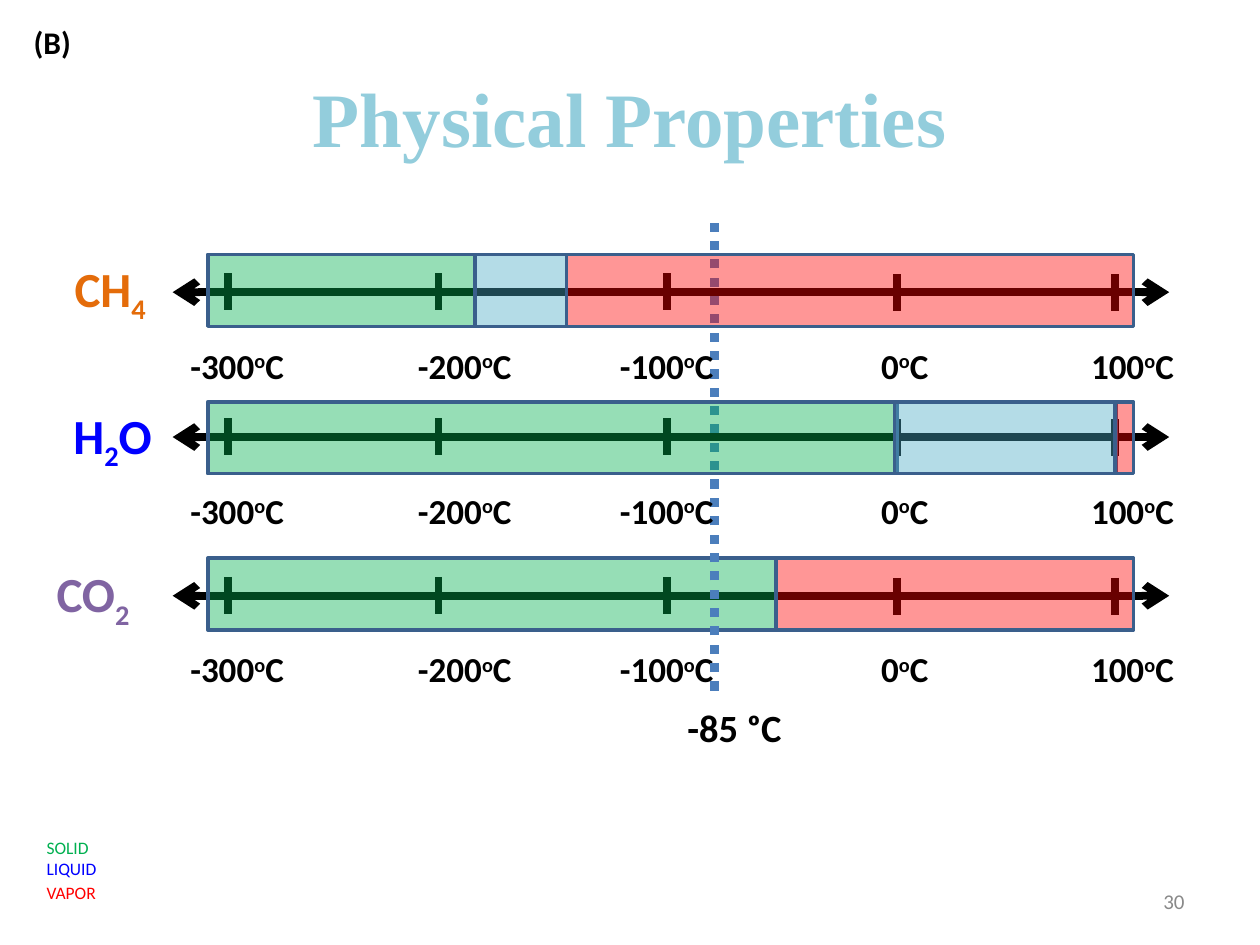
from lxml.etree import SubElement as Sub
from pptx import Presentation
from pptx.dml.color import RGBColor
from pptx.enum.dml import MSO_LINE as Dash
from pptx.enum.shapes import MSO_CONNECTOR as Link, MSO_SHAPE as Shape
from pptx.enum.text import MSO_ANCHOR as Anchor, PP_ALIGN as Align
from pptx.oxml.ns import qn
from pptx.util import Cm, Pt

BLACK, BLUE, EDGE = "000000", "0000FF", "3A5F8C"
SOLID, LIQUID, VAPOR = "00B050", "4BACC6", "FF0000"
SUPER, BELOW = 30, -25

# Tick position, label centre, label number (cm)
TICKS = [(4.6, 4.78, "-300"), (8.84, 9.37, "-200"), (13.44, 13.44, "-100"),
         (18.08, 18.24, "0"), (22.48, 22.83, "100")]
LEFT, RIGHT = 4.19, 22.85

# Axis height, top of the bands, then colour, start and end of each band
METHANE = (5.89, 5.13, [(SOLID, LEFT, 9.58), (LIQUID, 9.58, 11.42),
                        (VAPOR, 11.42, RIGHT)])
WATER = (8.81, 8.1, [(SOLID, LEFT, 18.08), (LIQUID, 18.03, 22.5),
                     (VAPOR, 22.48, RIGHT)])
CARBON = (12.01, 11.25, [(SOLID, LEFT, 15.65), (VAPOR, 15.65, RIGHT)])


def color(code):
    return RGBColor.from_string(code)


def style(par, size, code, bold=True, align=Align.LEFT, face="Calibri"):
    font = par.font
    font.name, font.size, font.bold = face, Pt(size), bold
    font.color.rgb = color(code)
    par.alignment = align


def write(par, parts):
    """Add (text, baseline shift in percent) parts as runs."""
    for text, shift in parts:
        run = par.add_run()
        run.text = text
        if shift:
            run._r.get_or_add_rPr().set("baseline", str(shift * 1000))


def box(shapes, area, lines, anchor=Anchor.MIDDLE):
    """Text box; each line holds its parts and its paragraph style."""
    frame = shapes.add_textbox(*map(Cm, area)).text_frame
    frame.word_wrap = True
    frame.vertical_anchor = anchor
    for num, (parts, look) in enumerate(lines):
        par = frame.add_paragraph() if num else frame.paragraphs[0]
        write(par, parts)
        style(par, *look)
    return frame


def rule(shapes, ends, width, code=BLACK, dash=None, arrows=False):
    link = shapes.add_connector(Link.STRAIGHT, *map(Cm, ends))
    line = link.line
    line.width = Pt(width)
    line.color.rgb = color(code)
    if dash:
        line.dash_style = dash
    props = link._element.spPr
    if arrows:
        for end in ("a:headEnd", "a:tailEnd"):
            Sub(props.find(qn("a:ln")), qn(end), type="arrow")
    Sub(props, qn("a:effectLst"))


def scale(shapes, y):
    """Temperature axis with ticks and labels, as one group."""
    group = shapes.add_group_shape().shapes
    rule(group, (3.48, y, 23.57, y), 4.5, arrows=True)
    for x, mid, num in TICKS:
        top = y - (0.36 if x > 15 else 0.38)
        rule(group, (x, top, x, top + 0.74), 4.5)
        parts = [(num, 0), ("o", SUPER), ("C", 0)]
        box(group, (mid - 1.65, y + 0.79, 3.3, 1.37),
            [(parts, (20, BLACK, True, Align.CENTER))])


def bands(shapes, top, spans):
    """Translucent bar for each state of matter."""
    for code, start, end in spans:
        bar = shapes.add_shape(Shape.RECTANGLE, Cm(start), Cm(top),
                               Cm(end - start), Cm(1.45))
        bar.shadow.inherit = False
        bar.fill.solid()
        bar.fill.fore_color.rgb = color(code)
        tint = bar._element.spPr.find(qn("a:solidFill"))[0]
        Sub(tint, qn("a:alpha"), val="41000")
        bar.line.color.rgb = color(EDGE)
        bar.line.width = Pt(2)


def row(shapes, data):
    y, top, spans = data
    scale(shapes, y)
    bands(shapes, top, spans)


def main():
    deck = Presentation()
    deck.slide_width, deck.slide_height = Cm(25.4), Cm(19.05)
    slide = deck.slides.add_slide(deck.slide_layouts[5])
    shapes = slide.shapes

    # Title
    title = shapes.title
    title.left, title.top, title.width, title.height = map(
        Cm, (1.27, 0.76, 22.86, 3.18))
    title.text_frame.text = "Physical Properties"
    title.text_frame.vertical_anchor = Anchor.MIDDLE
    style(title.text_frame.paragraphs[0], 44, "93CDDC", True,
          Align.CENTER, "Times New Roman")

    # Scales: the marker lies over carbon dioxide and under the others
    row(shapes, CARBON)
    rule(shapes, (14.4, 13.92, 14.4, 4.5), 5.25, "4B7EBC", Dash.ROUND_DOT)
    row(shapes, METHANE)
    row(shapes, WATER)

    # Formulas
    for area, parts, code, align in [
        ((0.33, 5.1, 3.78, 1.58), [("CH", 0), ("4", BELOW)],
         "E46C0A", Align.CENTER),
        ((0.38, 8.05, 3.78, 1.58), [("H", 0), ("2", BELOW), ("O", 0)],
         BLUE, Align.CENTER),
        ((0.89, 11.25, 2.69, 1.58), [("CO", 0), ("2", BELOW)],
         "8064A2", Align.LEFT),
    ]:
        box(shapes, area, [(parts, (28, code, True, align))])

    # Marker label, legend, page number and panel letter
    box(shapes, (13.61, 14.07, 2.97, 1.19),
        [([("-85 ᵒC", 0)], (22, BLACK))], Anchor.TOP)
    key = [("SOLID", SOLID), ("LIQUID", BLUE), ("VAPOR", VAPOR)]
    frame = box(shapes, (0.69, 16.74, 2.97, 1.63),
                [([(name, 0)], (10, code, False)) for name, code in key],
                Anchor.TOP)
    frame.paragraphs[-1].space_before = Pt(2)
    box(shapes, (18.21, 17.65, 5.92, 1.02),
        [([("30", 0)], (12, "898989", False, Align.RIGHT))])
    box(shapes, (0.43, 0.33, 1.47, 1.02),
        [([("(B)", 0)], (18, BLACK))], Anchor.TOP)

    deck.save("out.pptx")


if __name__ == "__main__":
    main()
